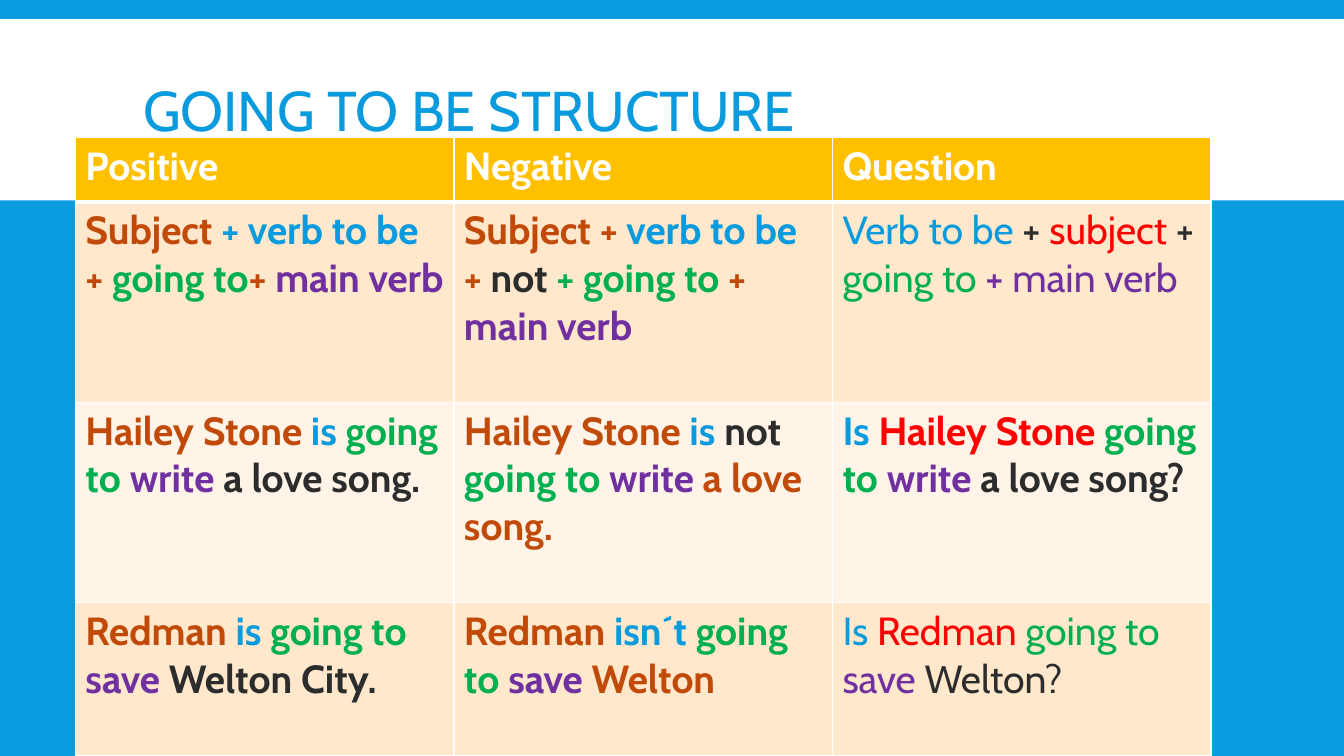
import pptx
import pptx.dml.color
import pptx.enum.shapes
import pptx.enum.text
import pptx.oxml
import pptx.oxml.ns
import pptx.util

RGBColor = pptx.dml.color.RGBColor
Cm = pptx.util.Cm
Pt = pptx.util.Pt

WHITE = RGBColor(0xFF, 0xFF, 0xFF)
BLUE = RGBColor(0x09, 0x9B, 0xDD)
AMBER = RGBColor(0xFF, 0xC0, 0x00)
PEACH = RGBColor(0xFF, 0xE8, 0xCC)
CREAM = RGBColor(0xFF, 0xF4, 0xE7)
RUST = RGBColor(0xC1, 0x4A, 0x08)
GREEN = RGBColor(0x00, 0xB0, 0x50)
PURPLE = RGBColor(0x70, 0x30, 0xA0)
RED = RGBColor(0xFF, 0x00, 0x00)
DARK = RGBColor(0x2C, 0x2C, 0x2C)

COLUMN_WIDTH = 9.54
ROW_HEIGHTS = [1.63, 5.05, 5.05, 3.86]
ROW_FILLS = [AMBER, PEACH, CREAM, PEACH]
LIGHT_CELLS = {(1, 2), (3, 2)}

STRUCTURE = [
    [[(heading, WHITE)] for heading in ("Positive", "Negative", "Question")],
    [
        [("Subject ", RUST), ("+ verb to be ", BLUE), ("+ ", RUST),
         ("going to", GREEN), ("+ ", RUST), ("main verb", PURPLE)],
        [("Subject + ", RUST), ("verb to be ", BLUE), ("+ ", RUST), ("not ", DARK),
         ("+ going to ", GREEN), ("+ ", RUST), ("main verb", PURPLE)],
        [("Verb to be ", BLUE), ("+ ", DARK), ("subject", RED), (" + ", DARK),
         ("going to ", GREEN), ("+ main verb", PURPLE)],
    ],
    [
        [("Hailey Stone ", RUST), ("is ", BLUE), ("going to ", GREEN),
         ("write ", PURPLE), ("a love song.", DARK)],
        [("Hailey Stone ", RUST), ("is ", BLUE), ("not ", DARK), ("going to ", GREEN),
         ("write", PURPLE), (" a love song.", RUST)],
        [("Is ", BLUE), ("Hailey Stone ", RED), ("going to ", GREEN),
         ("write ", PURPLE), ("a love song?", DARK)],
    ],
    [
        [("Redman ", RUST), ("is ", BLUE), ("going to ", GREEN),
         ("save ", PURPLE), ("Welton City.", DARK)],
        [("Redman ", RUST), ("isn´t ", BLUE), ("going to ", GREEN),
         ("save ", PURPLE), ("Welton", RUST)],
        [("Is", BLUE), (" Redman ", RED), ("going to ", GREEN),
         ("save ", PURPLE), ("Welton?", DARK)],
    ],
]


class GrammarSlide:
    font_name = "Cabin"

    def __init__(self, presentation):
        self.slide = presentation.slides.add_slide(presentation.slide_layouts[5])
        background = self.slide.background.fill
        background.solid()
        background.fore_color.rgb = BLUE

    def style(self, font, size, bold):
        font.name = self.font_name
        font.size = Pt(size)
        font.bold = bold

    def band(self, left, top, width, height):
        band = self.slide.shapes.add_shape(
            pptx.enum.shapes.MSO_SHAPE.RECTANGLE,
            Cm(left), Cm(top), Cm(width), Cm(height))
        band.shadow.inherit = False
        band.fill.solid()
        band.fill.fore_color.rgb = WHITE
        band.line.fill.background()

    def title(self, text, left, top, width, height):
        title = self.slide.shapes.title
        title.left, title.top = Cm(left), Cm(top)
        title.width, title.height = Cm(width), Cm(height)
        title.text_frame.text = text
        title.text_frame.vertical_anchor = pptx.enum.text.MSO_ANCHOR.MIDDLE
        heading = title.text_frame.paragraphs[0]
        heading.alignment = pptx.enum.text.PP_ALIGN.LEFT
        heading.line_spacing = 0.85
        self.style(heading.font, 40, False)
        heading.font.color.rgb = BLUE
        self.slide.shapes._spTree.append(title._element)

    def borders(self, cell, top, bottom):
        properties = cell._tc.get_or_add_tcPr()
        sides = [("lnL", 1), ("lnR", 1), ("lnT", top), ("lnB", bottom)]
        for position, (side, points) in enumerate(sides):
            properties.insert(position, pptx.oxml.parse_xml(
                f'<a:{side} {pptx.oxml.ns.nsdecls("a")} w="{Pt(points)}"><a:solidFill>'
                f'<a:srgbClr val="{WHITE}"/></a:solidFill></a:{side}>'))

    def cell(self, cell, phrases, fill, bold):
        cell.fill.solid()
        cell.fill.fore_color.rgb = fill
        sentence = cell.text_frame.paragraphs[0]
        self.style(sentence.font, 28, bold)
        for words, color in phrases:
            phrase = sentence.add_run()
            phrase.text = words
            phrase.font.color.rgb = color

    def table(self, rows, left, top):
        columns = len(rows[0])
        table = self.slide.shapes.add_table(
            len(rows), columns, Cm(left), Cm(top),
            Cm(COLUMN_WIDTH * columns), Cm(sum(ROW_HEIGHTS))).table
        table.horz_banding = False
        for column in table.columns:
            column.width = Cm(COLUMN_WIDTH)
        for r, row in enumerate(rows):
            table.rows[r].height = Cm(ROW_HEIGHTS[r])
            for c, phrases in enumerate(row):
                cell = table.cell(r, c)
                self.cell(cell, phrases, ROW_FILLS[r], (r, c) not in LIGHT_CELLS)
                self.borders(cell, 3 if r == 1 else 1, 3 if r == 0 else 1)


def main():
    presentation = pptx.Presentation()
    presentation.slide_width = Cm(33.87)
    presentation.slide_height = Cm(19.05)
    grammar = GrammarSlide(presentation)
    grammar.band(0, 0.48, 33.87, 4.57)
    grammar.title("GOING TO BE STRUCTURE", 3.35, 0.79, 27.18, 4.19)
    grammar.table(STRUCTURE, 1.9, 3.46)
    presentation.save("out.pptx")


if __name__ == "__main__":
    main()
